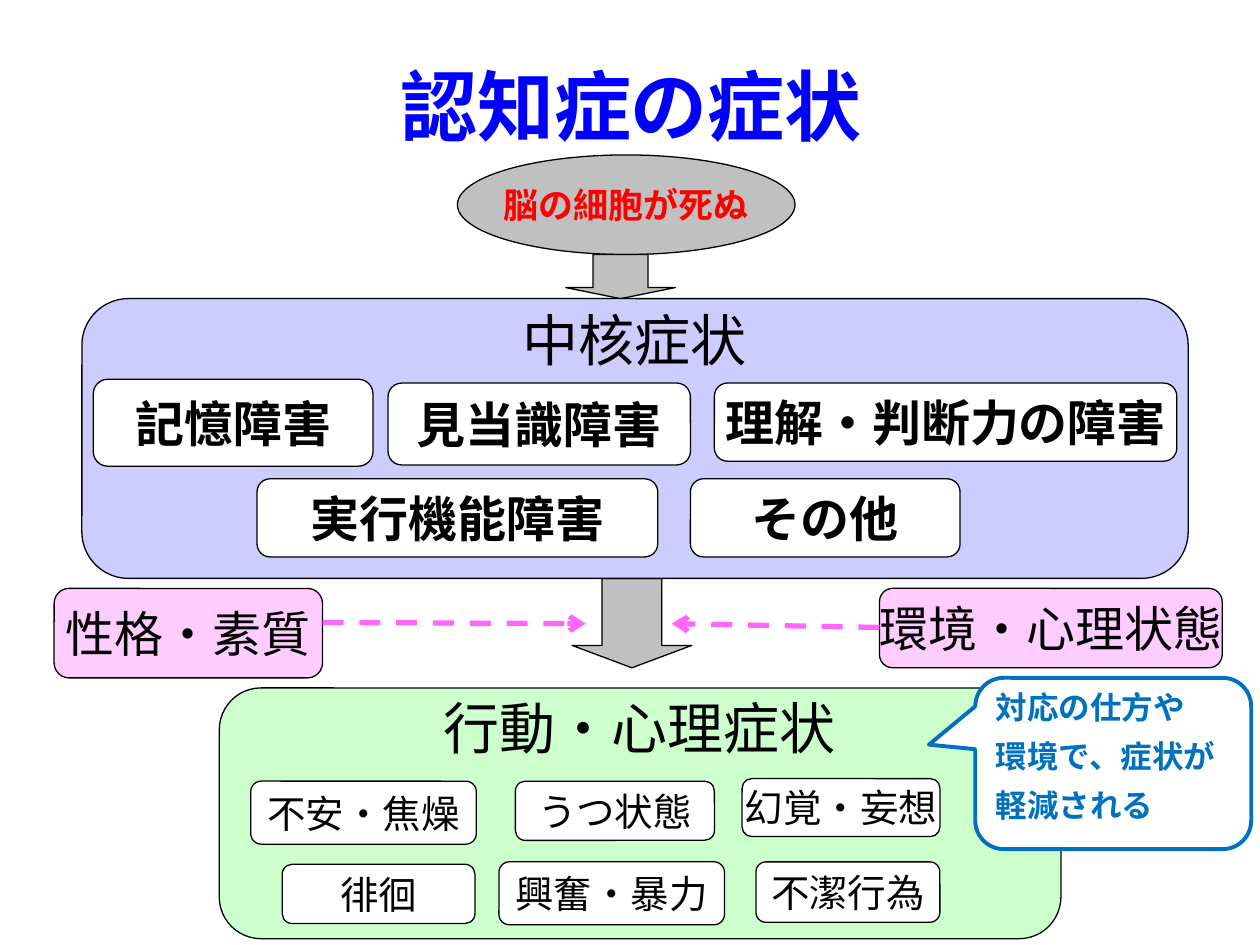
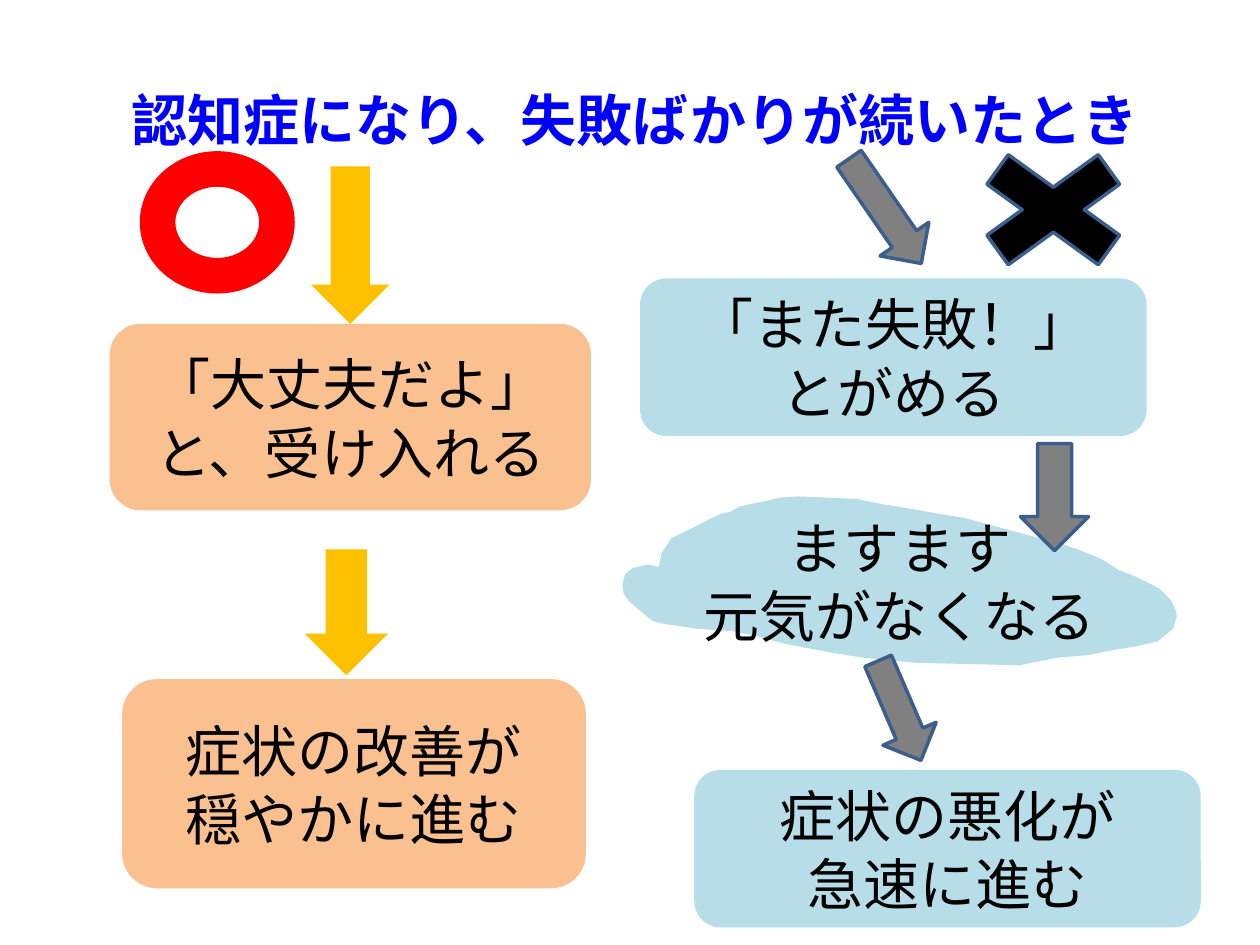
from lxml import etree
from pptx import Presentation
from pptx import util as u
from pptx.dml.color import RGBColor
from pptx.enum import dml, shapes, text
from pptx.oxml.ns import qn

PX = u.Inches(0.01)  # 100 px to the inch

BLACK = RGBColor(0x00, 0x00, 0x00)
WHITE = RGBColor(0xFF, 0xFF, 0xFF)
RED = RGBColor(0xFF, 0x00, 0x00)
TITLE_BLUE = RGBColor(0x00, 0x00, 0xFF)
SILVER = RGBColor(0xC0, 0xC0, 0xC0)
GRAY = RGBColor(0x80, 0x80, 0x80)
LAVENDER = RGBColor(0xCC, 0xCC, 0xFF)
MINT = RGBColor(0xCC, 0xFF, 0xCC)
PINK = RGBColor(0xFF, 0xCC, 0xFF)
MAGENTA = RGBColor(0xFF, 0x66, 0xFF)
NOTE_BLUE = RGBColor(0x00, 0x70, 0xC0)
EDGE_BLUE = RGBColor(0x3A, 0x5F, 0x8C)
ORANGE = RGBColor(0xFA, 0xC0, 0x90)
AMBER = RGBColor(0xFF, 0xC0, 0x00)
AQUA = RGBColor(0xB7, 0xDE, 0xE8)

CABIN, NOTO = "Cabin", "Noto Sans CJK JP"
SHAPE = shapes.MSO_SHAPE
CENTER = text.PP_ALIGN.CENTER

CORE_SYMPTOMS = [
    ("記憶障害", (9, 64, 222, 69)),
    ("見当識障害", (243, 67, 240, 65)),
    ("理解・判断力の障害", (502, 67, 367, 62)),
    ("実行機能障害", (139, 143, 318, 62)),
    ("その他", (483, 143, 214, 62)),
]
BEHAVIOUR_SYMPTOMS = [
    ("不安・焦燥", (25, 74, 179, 50)),
    ("うつ状態", (235, 74, 158, 47)),
    ("幻覚・妄想", (415, 72, 157, 46)),
    ("徘徊", (50, 140, 153, 47)),
    ("興奮・暴力", (222, 138, 179, 50)),
    ("不潔行為", (426, 138, 146, 48)),
]
CLOUD_OUTLINE = [
    (29, 56), (31, 45), (39, 33), (56, 25), (71, 17), (78, 14), (86, 12),
    (93, 8), (112, 4), (125, 1), (139, 0), (163, 1), (186, 2), (205, 6),
    (230, 10), (252, 14), (271, 17), (293, 23), (308, 27), (330, 33),
    (347, 37), (364, 43), (381, 50), (393, 58), (408, 64), (420, 70),
    (426, 73), (435, 82), (439, 90), (440, 95), (437, 105), (425, 115),
    (408, 119), (389, 122), (369, 126), (345, 128), (325, 132), (315, 134),
    (232, 132), (191, 128), (166, 124), (129, 117), (107, 111), (88, 107),
    (59, 105), (32, 101), (24, 99), (12, 89), (5, 83), (1, 77), (0, 70),
    (2, 62), (8, 57), (20, 54),
]


def shift(box, origin):
    """Turn a box measured from origin into a box measured from the slide."""
    return (origin[0] + box[0], origin[1] + box[1], *box[2:])


def emu(box):
    return [n * PX for n in box]


def write(tf, lines, size, color, font, bold=False, align=CENTER, spacing=None):
    for i, line in enumerate(lines):
        p = tf.paragraphs[0] if i == 0 else tf.add_paragraph()
        p.alignment = align
        if spacing:
            p.line_spacing = u.Pt(spacing)
        r = p.add_run()
        r.text = line
        r.font.size, r.font.bold, r.font.name = u.Pt(size), bold, font
        r.font.color.rgb = color
        etree.SubElement(r.font._element, qn("a:ea"), typeface=font)


def paint(sp, fill, line=None, width=0.75):
    sp.shadow.inherit = False
    sp.fill.solid()
    sp.fill.fore_color.rgb = fill
    if line is None:
        sp.line.fill.background()
    else:
        sp.line.color.rgb = line
        sp.line.width = u.Pt(width)
    return sp


def add_shape(slide, kind, box, fill, line=None, width=0.75, adj=(), rotation=0):
    sp = paint(slide.shapes.add_shape(kind, *emu(box)), fill, line, width)
    for i, value in enumerate(adj):
        sp.adjustments[i] = value
    sp.rotation = rotation
    return sp


def add_label(slide, box, label, size, fill, color=BLACK, bold=False,
              kind=SHAPE.ROUNDED_RECTANGLE):
    """Outlined shape with one unwrapped line of text."""
    tf = add_shape(slide, kind, box, fill, BLACK).text_frame
    tf.word_wrap = False
    tf.vertical_anchor = text.MSO_ANCHOR.MIDDLE
    write(tf, [label], size, color, CABIN, bold)


def add_title_slide(prs, title, box, size, font):
    slide = prs.slides.add_slide(prs.slide_layouts[5])
    sp = slide.shapes.title
    sp.left, sp.top, sp.width, sp.height = emu(box)
    tf = sp.text_frame
    tf.auto_size = text.MSO_AUTO_SIZE.NONE
    tf.vertical_anchor = text.MSO_ANCHOR.MIDDLE
    write(tf, [title], size, TITLE_BLUE, font, bold=True)
    return slide


def symptom_panel(slide, box, fill, heading, symptoms, size, bold):
    tf = add_shape(slide, SHAPE.ROUNDED_RECTANGLE, box, fill, BLACK).text_frame
    tf.word_wrap = False
    tf.vertical_anchor = text.MSO_ANCHOR.TOP
    tf.margin_top = 20 * PX
    write(tf, [heading], 32, BLACK, NOTO, spacing=20)
    for label, place in symptoms:
        add_label(slide, shift(place, box), label, size, WHITE, bold=bold)


def dashed_arrow(slide, start, end):
    line = slide.shapes.add_connector(
        shapes.MSO_CONNECTOR.STRAIGHT, *emu(start + end))
    line.line.color.rgb = MAGENTA
    line.line.width = u.Pt(3)
    line.line.dash_style = dml.MSO_LINE.DASH
    etree.SubElement(line.line._get_or_add_ln(), qn("a:tailEnd"), type="arrow")
    etree.SubElement(line._element.spPr, qn("a:effectLst"))


def influences(slide, box):
    """Personal and environmental factors pointing at the middle arrow."""
    def at(*place):
        return shift(place, box)
    add_label(slide, at(0, 8, 213, 71), "性格・素質", 28, PINK)
    add_shape(slide, SHAPE.DOWN_ARROW, at(411, 0, 95, 71), SILVER, BLACK,
              adj=(0.5, 0.25))
    add_label(slide, at(655, 8, 272, 63), "環境・心理状態", 28, PINK)
    dashed_arrow(slide, at(655, 39), at(490, 36))
    dashed_arrow(slide, at(213, 35), at(422, 36))


def callout(slide, box, lines):
    sp = add_shape(slide, SHAPE.ROUNDED_RECTANGULAR_CALLOUT, box, WHITE,
                   NOTE_BLUE, 2.25, (-0.668, -0.11, 0.167))
    tf = sp.text_frame
    tf.word_wrap = True
    tf.vertical_anchor = text.MSO_ANCHOR.TOP
    write(tf, lines, 18, NOTE_BLUE, NOTO, True, text.PP_ALIGN.LEFT, 19)
    for p in tf.paragraphs[1:]:
        p.space_before = u.Pt(9)


def symptoms_slide(prs):
    slide = add_title_slide(prs, "認知症の症状", (51, 21, 900, 125), 44, "Calibri")
    add_label(slide, (363, 123, 268, 79), "脳の細胞が死ぬ", 20, SILVER, RED, True,
              SHAPE.OVAL)
    add_shape(slide, SHAPE.DOWN_ARROW, (449, 202, 87, 35), SILVER, BLACK,
              adj=(0.5, 0.25))
    influences(slide, (43, 459, 927, 79))
    symptom_panel(slide, (65, 237, 878, 222), LAVENDER, "中核症状",
                  CORE_SYMPTOMS, 28, True)
    symptom_panel(slide, (174, 546, 668, 199), MINT, "行動・心理症状",
                  BEHAVIOUR_SYMPTOMS, 22, False)
    callout(slide, (774, 538, 219, 136),
            ["対応の仕方や", "環境で、症状が", "軽減される"])


def write_step(sp, lines):
    tf = sp.text_frame
    tf.word_wrap = True
    tf.vertical_anchor = text.MSO_ANCHOR.MIDDLE
    write(tf, lines, 32, BLACK, NOTO, spacing=39)


def step(slide, box, fill, lines):
    write_step(add_shape(slide, SHAPE.ROUNDED_RECTANGLE, box, fill), lines)


def cloud_step(slide, origin, lines):
    points = [shift(point, origin) for point in CLOUD_OUTLINE]
    builder = slide.shapes.build_freeform(*points[0], scale=PX)
    builder.add_line_segments(points[1:], close=True)
    write_step(paint(builder.convert_to_shape(), AQUA), lines)


def accepting_column(slide, box):
    def at(*place):
        return shift(place, box)
    step(slide, at(0, 137, 382, 148), ORANGE, ["「大丈夫だよ」", "と、受け入れる"])
    step(slide, at(10, 419, 368, 166), ORANGE, ["症状の改善が", "穏やかに進む"])
    for arrow in (at(160, 12, 62, 125), at(155, 316, 66, 100)):
        add_shape(slide, SHAPE.DOWN_ARROW, arrow, AMBER)
    add_shape(slide, SHAPE.DONUT, at(24, 0, 123, 113), RED)


def blaming_column(slide, box):
    def at(*place):
        return shift(place, box)
    step(slide, at(14, 116, 402, 125), AQUA, ["「また失敗！」", "とがめる"])
    cloud_step(slide, at(0, 289), ["ますます", "元気がなくなる"])
    step(slide, at(57, 506, 402, 125), AQUA, ["症状の悪化が", "急速に進む"])
    for arrow, angle in ((at(185, 12, 47, 101), 325.4),
                         (at(316, 247, 54, 85), 0),
                         (at(197, 416, 46, 86), 336.7)):
        add_shape(slide, SHAPE.DOWN_ARROW, arrow, GRAY, EDGE_BLUE, 2, rotation=angle)
    add_shape(slide, SHAPE.MATH_MULTIPLY, at(257, 0, 170, 123), BLACK, EDGE_BLUE, 2)


def responses_slide(prs):
    slide = add_title_slide(prs, "認知症になり、失敗ばかりが続いたとき",
                            (54, 32, 900, 125), 32, "Arial")
    accepting_column(slide, (87, 120, 382, 585))
    blaming_column(slide, (494, 105, 459, 631))


def main():
    prs = Presentation()
    prs.slide_width, prs.slide_height = emu((1000, 750))
    symptoms_slide(prs)
    responses_slide(prs)
    prs.save("out.pptx")


if __name__ == "__main__":
    main()
